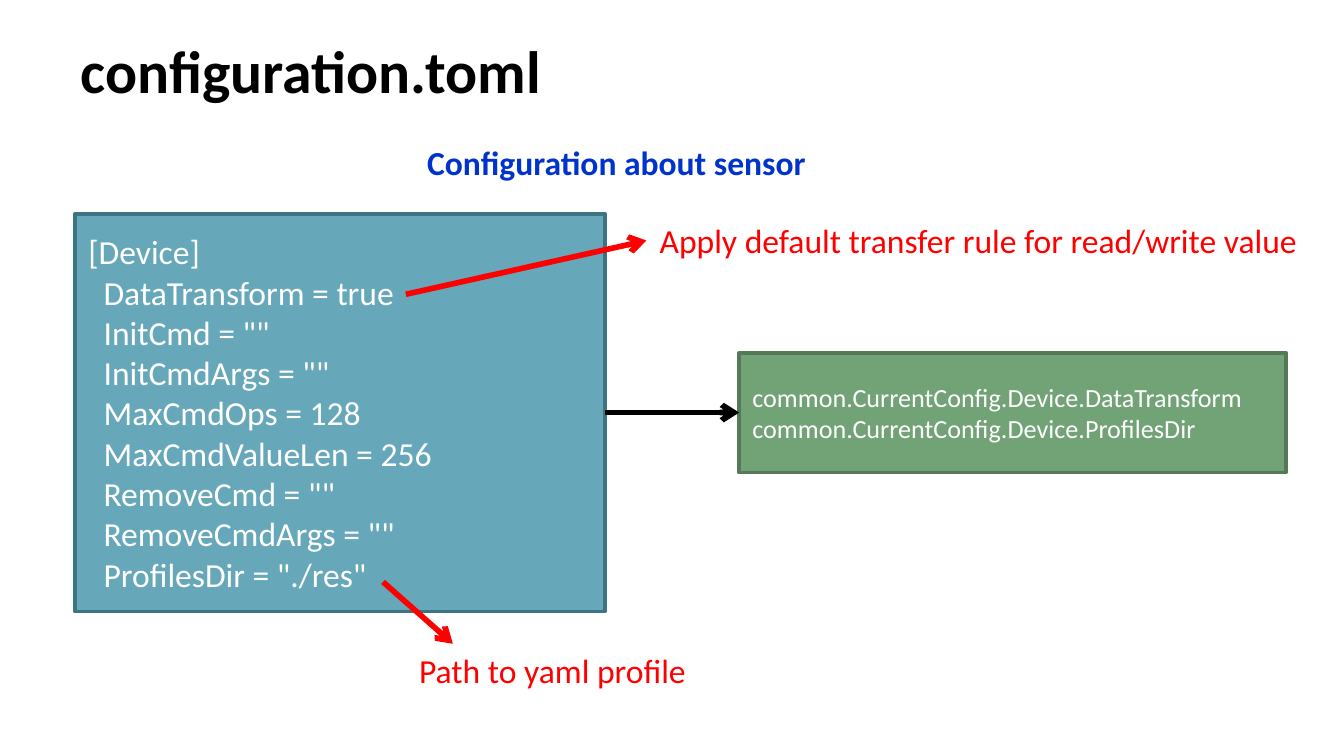
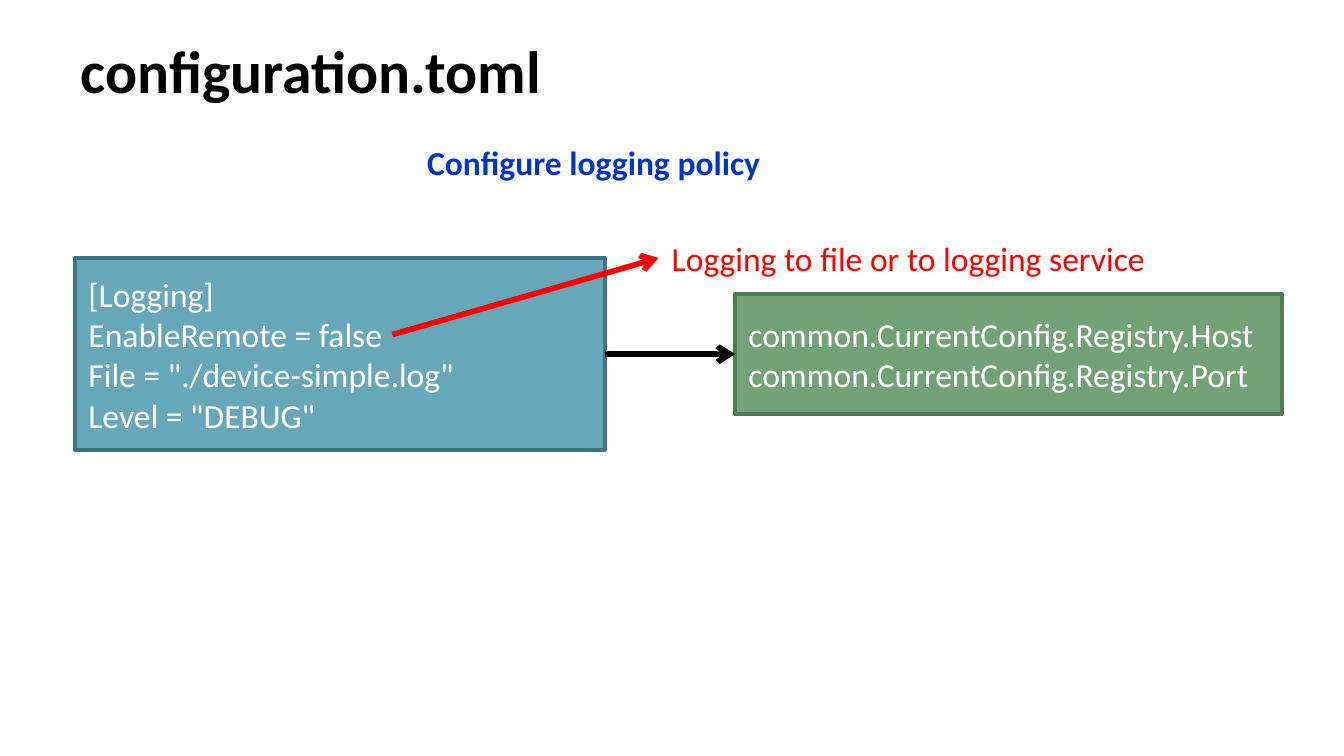
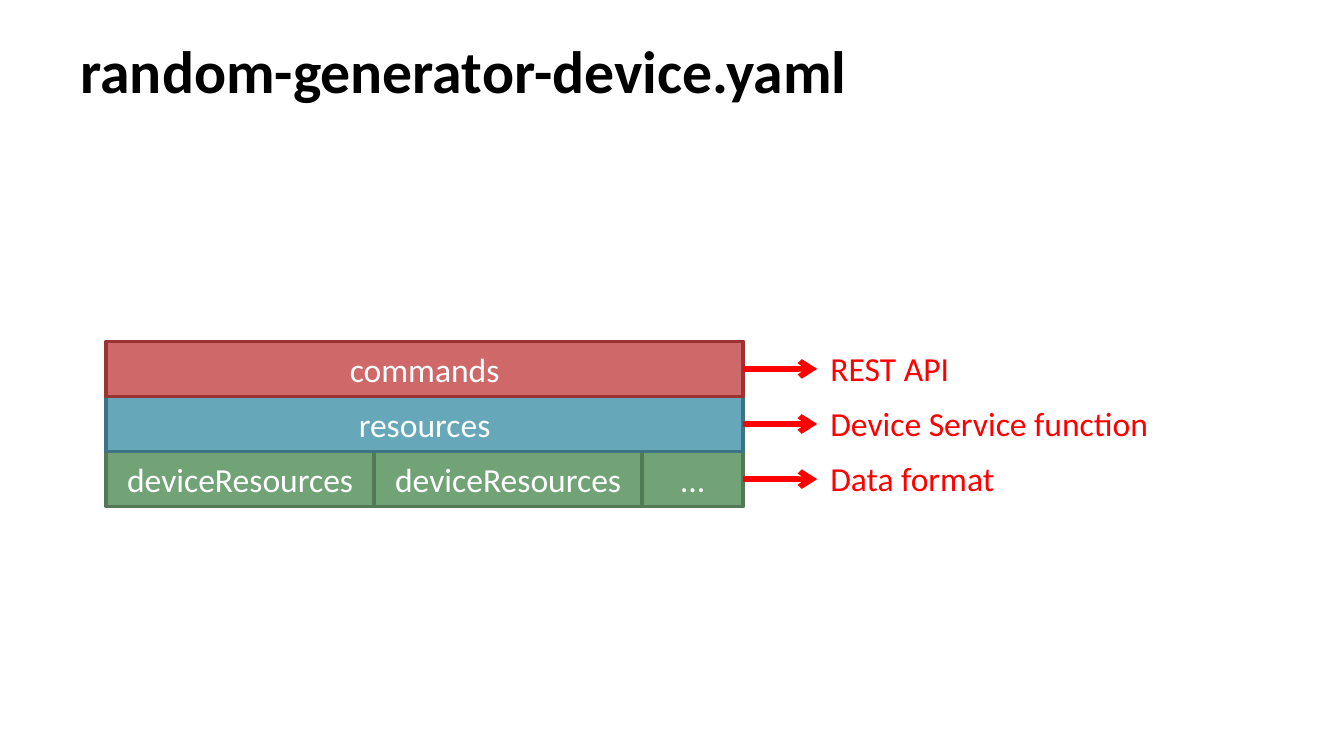
from dataclasses import dataclass

import pptx
import pptx.dml.color
import pptx.enum.shapes
import pptx.enum.text
import pptx.oxml.ns
import pptx.util
from lxml import etree

Inches = pptx.util.Inches
Pt = pptx.util.Pt
ALIGN = pptx.enum.text.PP_ALIGN
ANCHOR = pptx.enum.text.MSO_ANCHOR


@dataclass(frozen=True)
class Theme:
    font: str = "Calibri"
    title_size: int = 32
    body_size: int = 18
    small_size: int = 14
    black: str = "000000"
    white: str = "FFFFFF"
    heading: str = "0033CC"
    note: str = "FF0000"
    # Each box style is a fill and an outline
    blue: tuple = ("66A7B9", "3C7483")
    green: tuple = ("72A376", "547957")
    red: tuple = ("CF6868", "9D3232")
    outline: float = 2
    arrow: float = 3


THEME = Theme()
SLIDE_W = Inches(10)
SLIDE_H = SLIDE_W * 9 // 16
TITLE_BOX = (0.5, 0.1, 9, 0.83)
LABEL_H = 0.4
CODE_X, CODE_W = 0.56, 3.94
RESULT_W, RESULT_H = 4.07, 0.89


def rgb(value):
    return pptx.dml.color.RGBColor.from_string(value)


def write(tf, lines, color, size=THEME.body_size, bold=False, align=ALIGN.LEFT):
    font = {"name": THEME.font, "size": Pt(size), "bold": bold}
    for i, line in enumerate(lines):
        p = tf.paragraphs[0] if i == 0 else tf.add_paragraph()
        p.alignment = align
        r = p.add_run()
        r.text = line
        for key, value in font.items():
            setattr(r.font, key, value)
        r.font.color.rgb = rgb(color)


def add_slide(prs, title):
    s = prs.slides.add_slide(prs.slide_layouts[5])
    sp = s.shapes.title
    for key, value in zip(("left", "top", "width", "height"), TITLE_BOX):
        setattr(sp, key, Inches(value))
    sp.text_frame.vertical_anchor = ANCHOR.MIDDLE
    write(sp.text_frame, [title], THEME.black, THEME.title_size, bold=True)
    return s


def add_box(s, box, style, lines, **text):
    sp = s.shapes.add_shape(pptx.enum.shapes.MSO_SHAPE.RECTANGLE, *map(Inches, box))
    fill, line = style
    sp.shadow.inherit = False
    sp.fill.solid()
    sp.fill.fore_color.rgb = rgb(fill)
    sp.line.color.rgb = rgb(line)
    sp.line.width = Pt(THEME.outline)
    sp.text_frame.word_wrap = True
    sp.text_frame.vertical_anchor = ANCHOR.MIDDLE
    write(sp.text_frame, lines, THEME.white, **text)
    return sp


def add_label(s, x, y, w, text, color=THEME.note, bold=False):
    tf = s.shapes.add_textbox(*map(Inches, (x, y, w, LABEL_H))).text_frame
    tf.word_wrap = False
    tf.auto_size = pptx.enum.text.MSO_AUTO_SIZE.SHAPE_TO_FIT_TEXT
    write(tf, [text], color, bold=bold)


def add_arrow(s, start, end, color=THEME.note):
    cxn = s.shapes.add_connector(
        pptx.enum.shapes.MSO_CONNECTOR.STRAIGHT, *map(Inches, (*start, *end)))
    cxn.line.color.rgb = rgb(color)
    cxn.line.width = Pt(THEME.arrow)
    qn = pptx.oxml.ns.qn
    sp_pr = cxn._element.spPr
    etree.SubElement(sp_pr.find(qn("a:ln")), qn("a:tailEnd"), type="arrow")
    etree.SubElement(sp_pr, qn("a:effectLst"))
    return cxn


def config_slide(prs, heading, heading_w, code, top, height, result, result_x,
                 result_size, notes):
    """Code box with an arrow to the settings it yields, and notes on its lines.

    A note is (text, x, y, width, arrow start within the code box,
    arrow end within the note).
    """
    s = add_slide(prs, "configuration.toml")
    middle = top + height / 2
    target = add_box(s, (result_x, middle - RESULT_H / 2, RESULT_W, RESULT_H),
                     THEME.green, result, size=result_size)
    source = add_box(s, (CODE_X, top, CODE_W, height), THEME.blue, code)
    link = add_arrow(s, (CODE_X + CODE_W, middle), (result_x, middle), THEME.black)
    link.begin_connect(source, 3)
    link.end_connect(target, 1)
    add_label(s, 3.08, 1.01, heading_w, heading, THEME.heading, bold=True)
    for text, x, y, w, (from_x, from_y), (to_x, to_y) in notes:
        add_label(s, x, y, w, text)
        add_arrow(s, (CODE_X + from_x, top + from_y), (x + to_x, y + to_y))


def layer_stack(s, x, y, w, layers):
    """Rows of equal height, each with an arrow to its meaning.

    A layer is (style, cells, meaning, meaning width); a cell is (text, share).
    Lower rows are drawn first, so each row's outline covers the next one's.
    """
    row_h, arrow_w = 0.41, 0.55
    for i, (style, cells, meaning, meaning_w) in reversed(list(enumerate(layers))):
        row_y, cell_x = y + i * row_h, x
        total = sum(share for _, share in cells)
        for text, share in cells:
            cell_w = w * share / total
            add_box(s, (cell_x, row_y, cell_w, row_h), style, [text],
                    align=ALIGN.CENTER)
            cell_x += cell_w
        mid = row_y + row_h / 2
        add_arrow(s, (x + w, mid), (x + w + arrow_w, mid))
        add_label(s, x + w + arrow_w, row_y, meaning_w, meaning)


def main():
    prs = pptx.Presentation()
    prs.slide_width, prs.slide_height = SLIDE_W, SLIDE_H

    note_left = (0, LABEL_H / 2)
    config_slide(
        prs, "Configuration about sensor", 3.04,
        ["[Device]", "  DataTransform = true", '  InitCmd = ""',
         '  InitCmdArgs = ""', "  MaxCmdOps = 128", "  MaxCmdValueLen = 256",
         '  RemoveCmd = ""', '  RemoveCmdArgs = ""', '  ProfilesDir = "./res"'],
        1.59, 2.96,
        ["common.CurrentConfig.Device.DataTransform",
         "common.CurrentConfig.Device.ProfilesDir"],
        5.5, THEME.small_size,
        [("Path to yaml profile", 3.02, 4.79, 2.21, (2.29, 2.74), (0.35, 0)),
         ("Apply default transfer rule for read/write value", 4.81, 1.59, 5,
          (2.46, 0.6), note_left)])

    config_slide(
        prs, "Configure logging policy", 2.7,
        ["[Logging]", "EnableRemote = false", 'File = "./device-simple.log"',
         'Level = "DEBUG"'],
        1.92, 1.43,
        ["common.CurrentConfig.Registry.Host",
         "common.CurrentConfig.Registry.Port"],
        5.47, THEME.body_size,
        [("Logging to file or to logging service", 4.9, 1.72, 3.77,
          (2.36, 0.57), note_left)])

    s = add_slide(prs, "random-generator-device.yaml")
    layer_stack(s, 0.79, 2.54, 4.74, [
        (THEME.red, [("commands", 1)], "REST API", 1.09),
        (THEME.blue, [("resources", 1)], "Device Service function", 2.6),
        (THEME.green, [("deviceResources", 1.99), ("deviceResources", 1.99),
                       ("…", 0.75)], "Data format", 1.43),
    ])
    prs.save("out.pptx")


if __name__ == "__main__":
    main()
